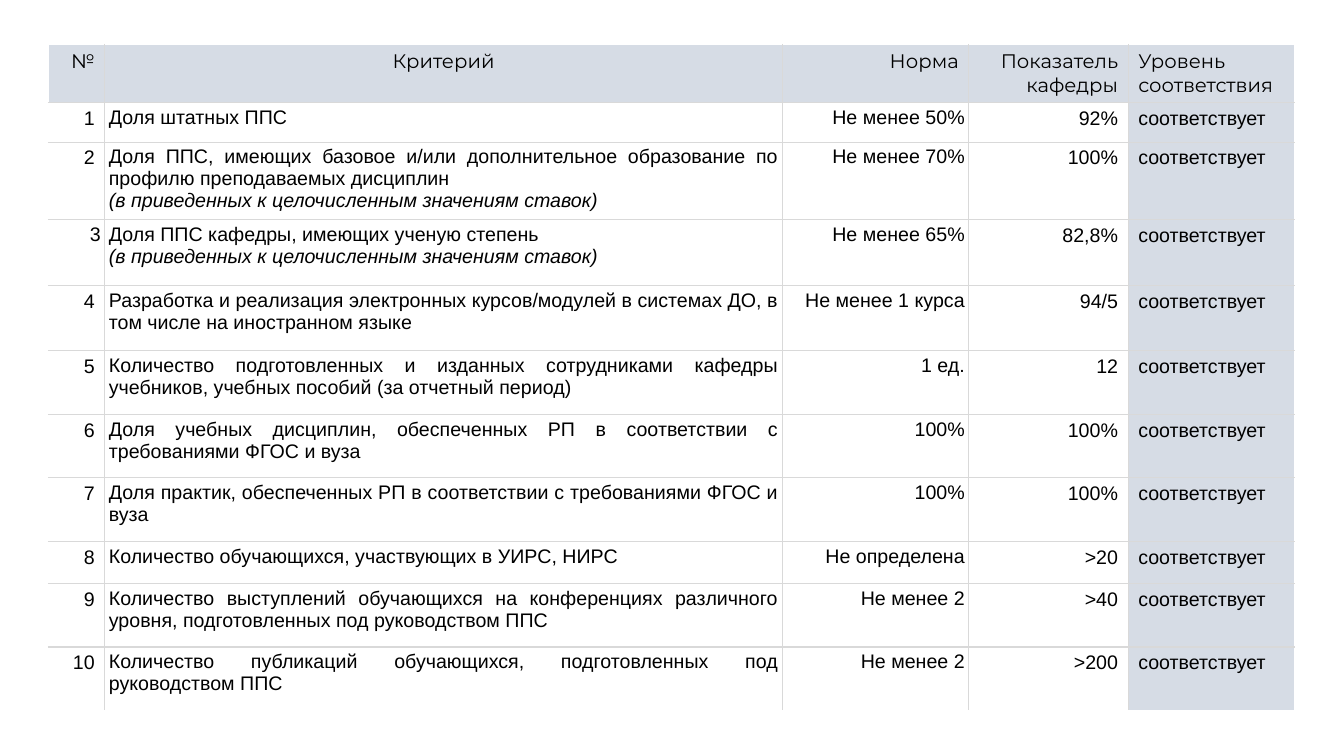
from lxml.etree import SubElement
from pptx import Presentation
from pptx.dml.color import RGBColor
from pptx.enum.text import PP_ALIGN as Align
from pptx.oxml.ns import qn
from pptx.util import Inches, Pt

BLACK = RGBColor(0x00, 0x00, 0x00)
WHITE = RGBColor(0xFF, 0xFF, 0xFF)
GRID_GREY = RGBColor(0xD9, 0xD9, 0xD9)
PALE_BLUE = RGBColor(0xD6, 0xDC, 0xE5)

COLUMN_WIDTHS = [0.56, 6.72, 1.85, 1.58, 1.65]
ROW_HEIGHTS = [0.58, 0.39, 0.77, 0.65, 0.65, 0.63, 0.63, 0.63, 0.42, 0.63, 0.63]
HEADER_ALIGNS = [Align.RIGHT, Align.CENTER, Align.RIGHT, Align.RIGHT, Align.LEFT]
BODY_ALIGNS = [Align.RIGHT, Align.JUSTIFY, Align.RIGHT, Align.RIGHT, Align.LEFT]
LEVEL_COLUMN = 4
TIGHT_COLUMNS = (1, 2)
TIGHT_NUMBER_CELL = (3, 0)

HEADERS = ["№", "Критерий", "Норма", "Показатель кафедры", "Уровень соответствия"]
LEVEL = "соответствует"
STAFF_NOTE = "(в приведенных к целочисленным значениям ставок)"
# Criterion, norm, department result
CRITERIA = [
    ("Доля штатных ППС", "Не менее 50%", "92%"),
    ("Доля ППС, имеющих базовое и/или дополнительное образование по профилю "
     "преподаваемых дисциплин\n" + STAFF_NOTE, "Не менее 70%", "100%"),
    ("Доля ППС кафедры, имеющих ученую степень\n" + STAFF_NOTE,
     "Не менее 65%", "82,8%"),
    ("Разработка и реализация электронных курсов/модулей в системах ДО, "
     "в том числе на иностранном языке", "Не менее 1 курса", "94/5"),
    ("Количество подготовленных и изданных сотрудниками кафедры учебников, "
     "учебных пособий (за отчетный период)", "1 ед.", "12"),
    ("Доля учебных дисциплин, обеспеченных РП в соответствии с требованиями "
     "ФГОС и вуза", "100%", "100%"),
    ("Доля практик, обеспеченных РП в соответствии с требованиями ФГОС и вуза",
     "100%", "100%"),
    ("Количество обучающихся, участвующих в УИРС, НИРС", "Не определена", ">20"),
    ("Количество выступлений обучающихся на конференциях различного уровня, "
     "подготовленных под руководством ППС", "Не менее 2", ">40"),
    ("Количество публикаций обучающихся, подготовленных под руководством ППС",
     "Не менее 2", ">200"),
]


def set_borders(cell, row, column):
    """White on the outer edge of the table, grey inside."""
    outer_sides = {
        "a:lnL": column == 0,
        "a:lnR": column == len(COLUMN_WIDTHS) - 1,
        "a:lnT": row == 0,
        "a:lnB": row == len(ROW_HEIGHTS) - 1,
    }
    properties = cell._tc.get_or_add_tcPr()
    for side, is_outer in outer_sides.items():
        border = SubElement(properties, qn(side), w=str(Pt(1)))
        fill = SubElement(border, qn("a:solidFill"))
        SubElement(fill, qn("a:srgbClr"), val=str(WHITE if is_outer else GRID_GREY))


def write_text(cell, text, align, font_name):
    cell.text_frame.text = text
    for paragraph in cell.text_frame.paragraphs:
        paragraph.alignment = align
        for run in paragraph.runs:
            run.font.name = font_name
            run.font.size = Pt(14)
            run.font.bold = False
            run.font.italic = run.text == STAFF_NOTE
            run.font.color.rgb = BLACK


def fill_cell(cell, row, column, text):
    is_header = row == 0
    aligns = HEADER_ALIGNS if is_header else BODY_ALIGNS
    write_text(cell, text, aligns[column], "Montserrat" if is_header else "Arial")
    set_borders(cell, row, column)
    if is_header or column == LEVEL_COLUMN:
        cell.fill.solid()
        cell.fill.fore_color.rgb = PALE_BLUE
    else:
        cell.fill.background()
    if (not is_header and column in TIGHT_COLUMNS) or (row, column) == TIGHT_NUMBER_CELL:
        cell.margin_left = cell.margin_right = Inches(0.04)
        cell.margin_top = cell.margin_bottom = Inches(0.04)


def add_criteria_table(slide):
    rows = [HEADERS] + [
        [str(number), *criterion, LEVEL]
        for number, criterion in enumerate(CRITERIA, start=1)
    ]
    table = slide.shapes.add_table(
        len(rows), len(HEADERS), Inches(0.48), Inches(0.44),
        Inches(sum(COLUMN_WIDTHS)), Inches(sum(ROW_HEIGHTS))).table
    table.horz_banding = False
    for column, width in zip(table.columns, COLUMN_WIDTHS):
        column.width = Inches(width)
    for row, height in zip(table.rows, ROW_HEIGHTS):
        row.height = Inches(height)
    for row, texts in enumerate(rows):
        for column, text in enumerate(texts):
            fill_cell(table.cell(row, column), row, column, text)


def main():
    presentation = Presentation()
    presentation.slide_width = Inches(13.33)
    presentation.slide_height = Inches(7.5)
    # Blank layout: the slide has no title
    slide = presentation.slides.add_slide(presentation.slide_layouts[6])
    add_criteria_table(slide)
    presentation.save("out.pptx")


if __name__ == "__main__":
    main()
